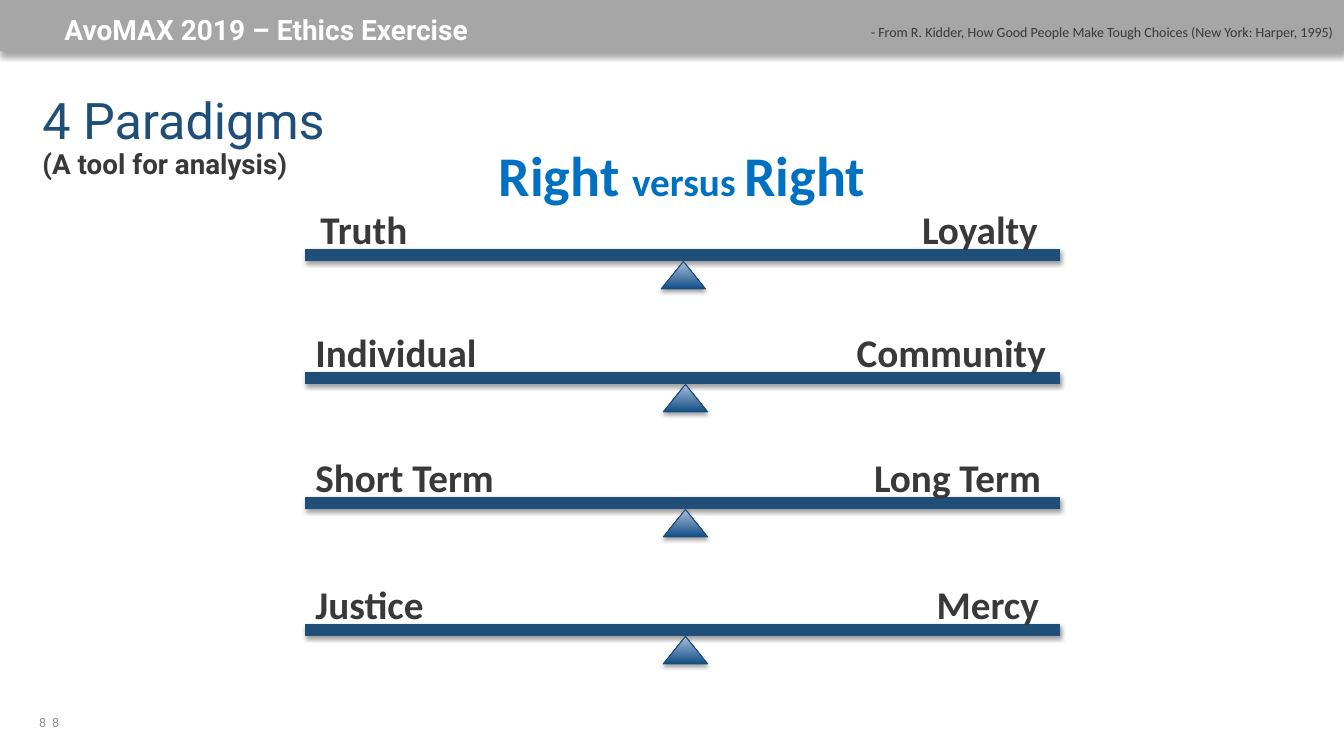
from lxml import etree
from pptx import Presentation
from pptx.dml.color import RGBColor
from pptx.enum import shapes, text
from pptx.oxml import ns
from pptx.util import Pt

COLORS = {
    "white": "FFFFFF", "banner": "A6A6A6", "number": "919191",
    "navy": "1F4E79", "ink": "3A3838", "blue": "0070C0",
    "edge": "1C4C79", "dark": "124F86", "light": "ACBDDC", "shadow": "000000",
}
COLORS = {name: RGBColor.from_string(code) for name, code in COLORS.items()}

deck = Presentation()
deck.slide_width, deck.slide_height = Pt(960), Pt(540)
page = deck.slides.add_slide(deck.slide_layouts[6])


def add_shadow(shape, opacity, blur, distance):
    """Cast a soft black shadow straight down."""
    effects = etree.SubElement(shape._element.spPr, ns.qn("a:effectLst"))
    outer = etree.SubElement(effects, ns.qn("a:outerShdw"), blurRad=str(Pt(blur)),
                             dist=str(Pt(distance)), dir="5400000", rotWithShape="0")
    color = etree.SubElement(outer, ns.qn("a:srgbClr"), val=str(COLORS["shadow"]))
    etree.SubElement(color, ns.qn("a:alpha"), val=str(opacity * 1000))


def add_text(left, top, width, height, spans, font, color, anchor="TOP"):
    """Add a wrapped one-paragraph box; spans are (words, size, bold)."""
    box = page.shapes.add_textbox(Pt(left), Pt(top), Pt(width), Pt(height))
    box.text_frame.word_wrap = True
    box.text_frame.vertical_anchor = text.MSO_ANCHOR[anchor]
    para = box.text_frame.paragraphs[0]
    for words, size, bold in spans:
        span = para.add_run()
        span.text = words
        span.font.name, span.font.size, span.font.bold = font, Pt(size), bold
        span.font.color.rgb = COLORS[color]
    return box, para


# Banner
banner = page.shapes.add_shape(shapes.MSO_SHAPE.RECTANGLE, 0, 0, Pt(960), Pt(36.7))
banner.fill.solid()
banner.fill.fore_color.rgb = COLORS["banner"]
banner.line.fill.background()
add_shadow(banner, 35, 4.2, 3)

# Page number, shown twice
for left in (30.2, 20.9):
    add_text(left, 501.8, 216, 28.8, [("8", 9, False)], "Roboto", "number", "MIDDLE")

# Title and subtitle
box, para = add_text(20.9, 60.5, 918, 76.3, [("4 Paradigms", 36, False)],
                     "Roboto", "navy", "MIDDLE")
frame = box.text_frame
frame.margin_left = frame.margin_right = Pt(9.4)
frame.margin_top = frame.margin_bottom = Pt(5)
para.line_spacing = 0.9
para.add_line_break()
span = para.add_run()
span.text = "(A tool for analysis)"
span.font.name, span.font.size, span.font.bold = "Roboto", Pt(19.8), True
span.font.color.rgb = COLORS["ink"]

# Banner text
box, para = add_text(38.9, 7.9, 830.9, 33.8, [("AvoMAX 2019 – Ethics Exercise", 20, True)],
                     "Roboto", "white")
para.line_spacing = 0.9

# Balances: beam height, fulcrum left, label left, right tab, two labels
balances = [
    (182.2, 472.3, 221.8, 512.4, "Truth", "Loyalty"),
    (270, 473.8, 218.2, 521.7, "Individual", "Community"),
    (359.3, 473.8, 218.2, 518.2, "Short Term", "Long Term"),
    (450, 473.8, 218.2, 516.7, "Justice", "Mercy"),
]
for beam_y, fulcrum_x, label_x, tab, first, second in balances:
    beam = page.shapes.add_connector(shapes.MSO_CONNECTOR.STRAIGHT,
                                     Pt(218.2), Pt(beam_y), Pt(757.4), Pt(beam_y))
    beam.line.color.rgb = COLORS["navy"]
    beam.line.width = Pt(8.5)
    add_shadow(beam, 38, 3.1, 1.6)

    fulcrum = page.shapes.add_shape(shapes.MSO_SHAPE.ISOSCELES_TRIANGLE, Pt(fulcrum_x),
                                    Pt(beam_y + 4.6), Pt(31.7), Pt(19.6))
    fulcrum.fill.gradient()
    fulcrum.fill.gradient_angle = 90
    for stop, name in zip(fulcrum.fill.gradient_stops, ("dark", "light")):
        stop.color.rgb = COLORS[name]
    fulcrum.line.color.rgb = COLORS["edge"]
    fulcrum.line.width = Pt(0.75)
    add_shadow(fulcrum, 35, 3.1, 1.8)

    box, para = add_text(label_x, beam_y - 39.2, 539.3, 41,
                         [(f"{first}\t{second}", 28, True)], "Calibri", "ink")
    tabs = etree.SubElement(para._p.get_or_add_pPr(), ns.qn("a:tabLst"))
    etree.SubElement(tabs, ns.qn("a:tab"), pos=str(Pt(tab)), algn="r")

# Citation
citation = "- From R. Kidder, How Good People Make Tough Choices (New York: Harper, 1995)"
box, para = add_text(607.7, 13, 351.4, 19.4, [(citation, 10, False)], "Calibri", "ink")
para.alignment = text.PP_ALIGN.RIGHT

# Heading above the balances
add_text(349.2, 96.5, 308.9, 55.4,
         [("Right ", 40, True), ("versus ", 28, True), ("Right", 40, True)],
         "Calibri", "blue")

deck.save("out.pptx")
